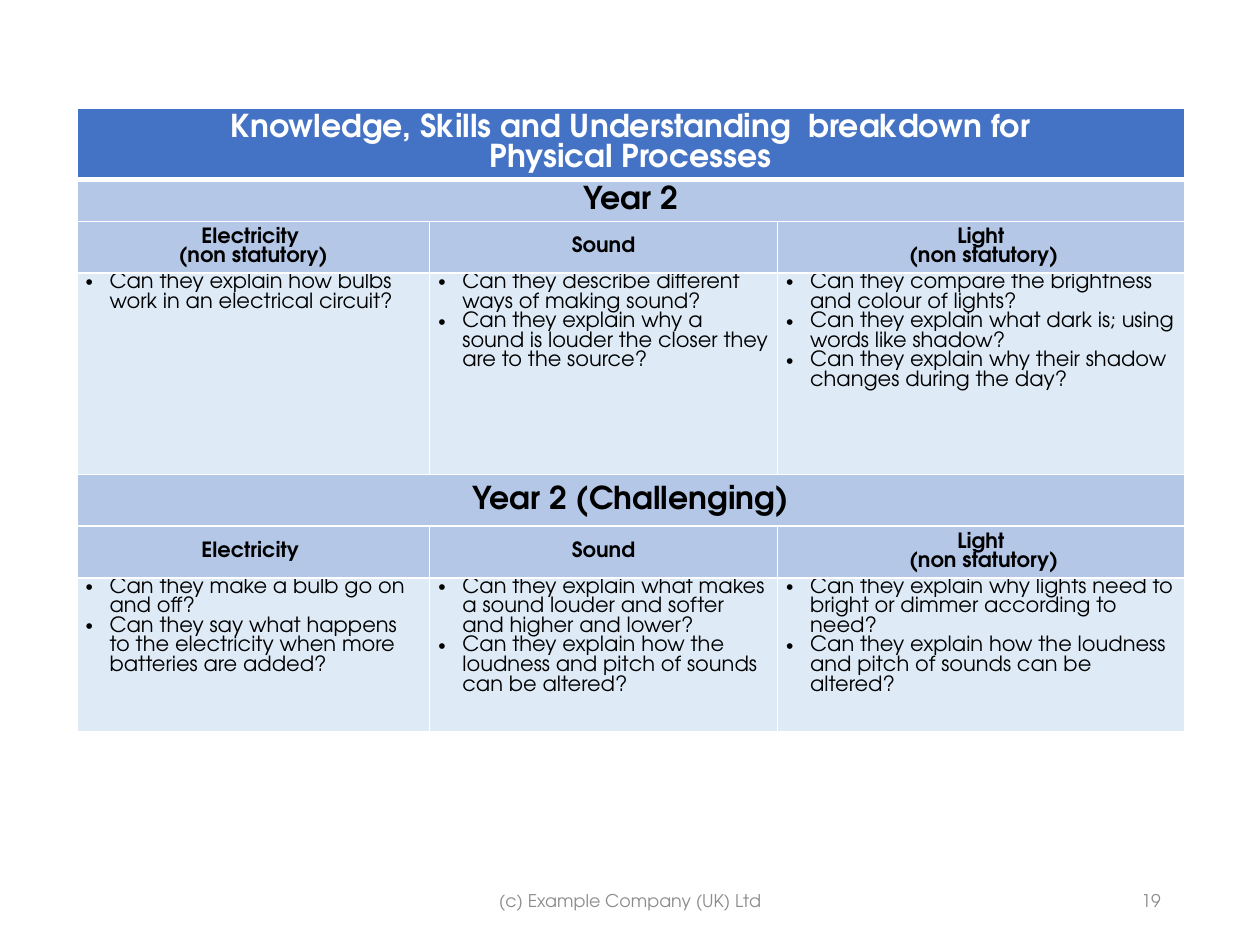
from pptx import Presentation
from pptx.dml.color import RGBColor
from pptx.enum.text import MSO_ANCHOR, PP_ALIGN
from pptx.oxml import parse_xml
from pptx.oxml.ns import nsdecls
from pptx.util import Inches, Pt

FONT = "TeX Gyre Adventor"
WHITE = RGBColor(0xFF, 0xFF, 0xFF)
BLACK = RGBColor(0, 0, 0)
GREY = RGBColor(0x8C, 0x8C, 0x8C)
BLUE = RGBColor(0x44, 0x72, 0xC4)
LIGHT_BLUE = RGBColor(0xB4, 0xC7, 0xE7)
PALE_BLUE = RGBColor(0xDE, 0xEB, 0xF7)

COLUMN_WIDTHS = [2.8, 2.76, 3.23]
ROW_HEIGHTS = [0.41, 0.3, 0.41, 1.6, 0.41, 0.41, 1.22]
TITLE = "Knowledge, Skills and Understanding  breakdown for\nPhysical Processes"
YEAR_TOPICS = ["Electricity \n(non statutory)", "Sound", "Light\n (non statutory)"]
YEAR_QUESTIONS = [
    "Can they explain how bulbs work in an electrical circuit?",
    "Can they describe different ways of making sound?\n"
    "Can they explain why a sound is louder the closer they are to the source?",
    "Can they compare the brightness and colour of lights?\n"
    "Can they explain what dark is; using words like shadow?\n"
    "Can they explain why their shadow changes during the day?",
]
CHALLENGE_TOPICS = ["Electricity ", "Sound", "Light\n (non statutory)"]
PITCH_QUESTION = "Can they explain how the loudness and pitch of sounds can be altered?"
CHALLENGE_QUESTIONS = [
    "Can they make a bulb go on and off?\n"
    "Can they say what happens to the electricity when more batteries are added?",
    "Can they explain what makes a sound louder and softer and higher and lower?\n"
    + PITCH_QUESTION,
    "Can they explain why lights need to bright or dimmer according to need?\n"
    + PITCH_QUESTION,
]


class SlideBuilder:
    def __init__(self, slide, font):
        self.slide = slide
        self.font = font

    def format_text(self, text_frame, size, color, bold, align):
        for paragraph in text_frame.paragraphs:
            paragraph.alignment = align
            for run in paragraph.runs:
                run.font.name = self.font
                run.font.size = Pt(size)
                run.font.bold = bold
                run.font.color.rgb = color

    def text(self, left, top, width, height, text, align):
        shape = self.slide.shapes.add_textbox(
            Inches(left), Inches(top), Inches(width), Inches(height))
        text_frame = shape.text_frame
        text_frame.word_wrap = True
        text_frame.vertical_anchor = MSO_ANCHOR.MIDDLE
        text_frame.text = text
        self.format_text(text_frame, 10, GREY, False, align)

    def table(self, left, top, widths, heights):
        table = self.slide.shapes.add_table(
            len(heights), len(widths), Inches(left), Inches(top),
            Inches(sum(widths)), Inches(sum(heights))).table
        for column, width in zip(table.columns, widths):
            column.width = Inches(width)
        for row, height in zip(table.rows, heights):
            row.height = Inches(height)
        return table

    def borders(self, cell, bottom):
        properties = cell._tc.get_or_add_tcPr()
        for index, side in enumerate(["lnL", "lnR", "lnT", "lnB"]):
            width = Pt(bottom if side == "lnB" else 1)
            properties.insert(index, parse_xml(
                f'<a:{side} {nsdecls("a")} w="{width}"><a:solidFill>'
                f'<a:srgbClr val="{WHITE}"/></a:solidFill></a:{side}>'))

    def cell(self, cell, text, fill, size=12, color=BLACK, bold=True,
             align=PP_ALIGN.CENTER, anchor=MSO_ANCHOR.MIDDLE,
             side=0.07, edge=0, bottom=1):
        cell.fill.solid()
        cell.fill.fore_color.rgb = fill
        cell.margin_left = cell.margin_right = Inches(side)
        cell.margin_top = cell.margin_bottom = Inches(edge)
        cell.vertical_anchor = anchor
        cell.text_frame.text = text
        self.format_text(cell.text_frame, size, color, bold, align)
        self.borders(cell, bottom)

    def banner(self, table, row, text, fill=LIGHT_BLUE, **style):
        last = len(table.columns) - 1
        table.cell(row, 0).merge(table.cell(row, last))
        for column in range(last + 1):
            self.cell(table.cell(row, column), "" if column else text, fill,
                      size=18, **style)

    def topics(self, table, row, topics):
        for column, topic in enumerate(topics):
            self.cell(table.cell(row, column), topic, LIGHT_BLUE)

    def questions(self, table, row, questions):
        for column, question in enumerate(questions):
            cell = table.cell(row, column)
            self.cell(cell, question, PALE_BLUE, bold=False,
                      align=PP_ALIGN.LEFT, anchor=MSO_ANCHOR.TOP)
            for paragraph in cell.text_frame.paragraphs:
                properties = paragraph._p.get_or_add_pPr()
                properties.set("marL", str(Inches(0.19)))
                properties.set("indent", str(-Inches(0.19)))
                properties.append(parse_xml(
                    f'<a:buFont {nsdecls("a")} typeface="Arial"/>'))
                properties.append(parse_xml(
                    f'<a:buChar {nsdecls("a")} char="•"/>'))


def main():
    presentation = Presentation()
    presentation.slide_width = Inches(10)
    presentation.slide_height = Inches(7.5)
    slide = presentation.slides.add_slide(presentation.slide_layouts[6])
    builder = SlideBuilder(slide, FONT)

    table = builder.table(0.61, 0.86, COLUMN_WIDTHS, ROW_HEIGHTS)
    builder.banner(table, 0, TITLE, BLUE, color=WHITE, anchor=MSO_ANCHOR.TOP,
                   side=0.1, edge=0.05, bottom=3)
    builder.banner(table, 1, "Year 2", side=0.1, edge=0.05)
    builder.topics(table, 2, YEAR_TOPICS)
    builder.questions(table, 3, YEAR_QUESTIONS)
    builder.banner(table, 4, "Year 2 (Challenging)")
    builder.topics(table, 5, CHALLENGE_TOPICS)
    builder.questions(table, 6, CHALLENGE_QUESTIONS)

    builder.text(3.31, 6.95, 3.38, 0.4, "(c) Example Company (UK) Ltd", PP_ALIGN.CENTER)
    builder.text(7.06, 6.95, 2.25, 0.4, "19", PP_ALIGN.RIGHT)
    presentation.save("out.pptx")


if __name__ == "__main__":
    main()
